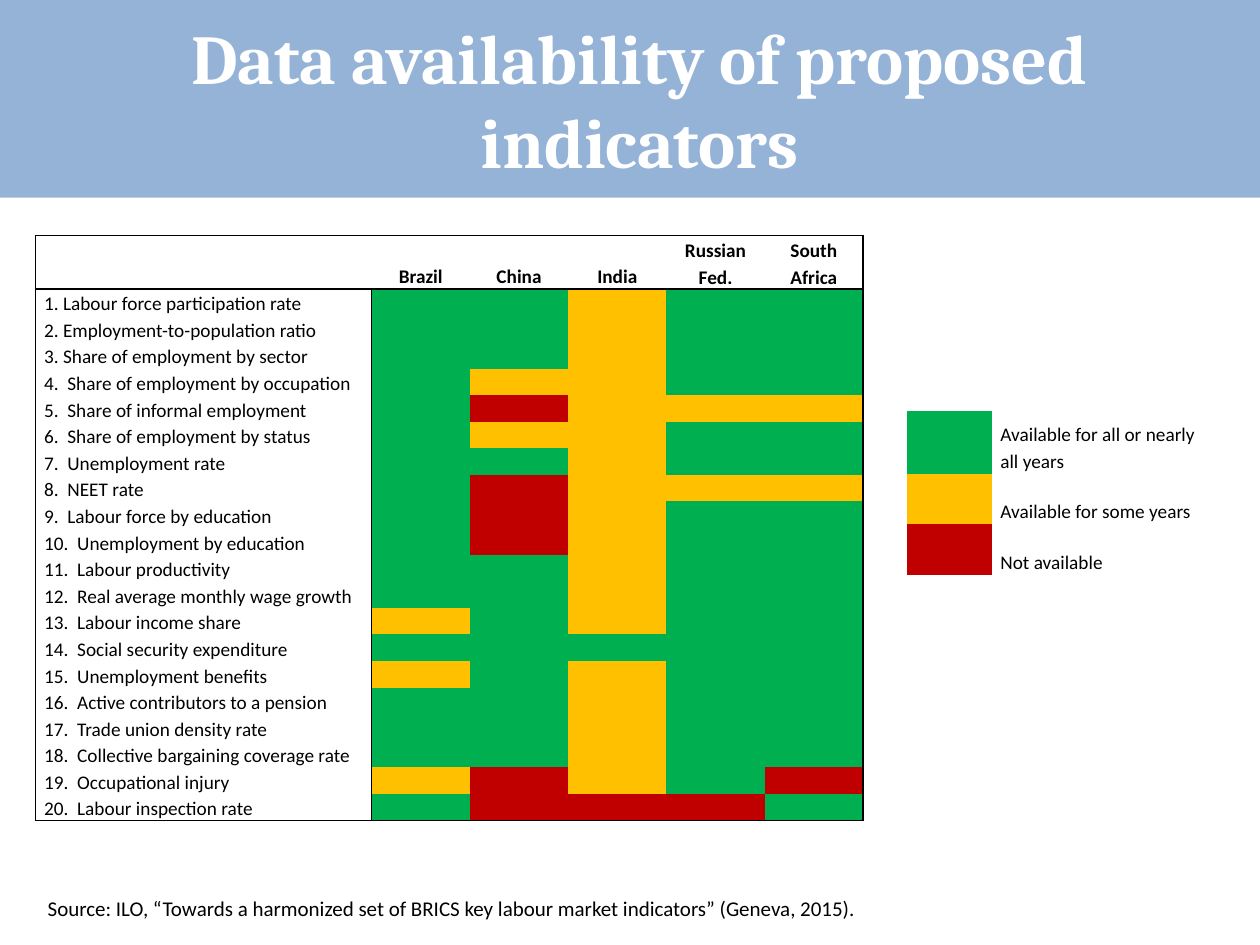
from lxml.etree import SubElement
from pptx import Presentation
from pptx.dml.color import RGBColor
from pptx.enum.shapes import MSO_SHAPE
from pptx.enum.text import MSO_ANCHOR, MSO_AUTO_SIZE, PP_ALIGN
from pptx.oxml.ns import qn
from pptx.util import Inches, Pt

COLOURS = {"G": "00B050", "Y": "FFC000", "R": "C00000"}
COUNTRIES = ["Brazil", "China", "India", "Russian Fed.", "South Africa"]
INDICATORS = [
    ("Labour force participation rate", "GGYGG"),
    ("Employment-to-population ratio", "GGYGG"),
    ("Share of employment by sector", "GGYGG"),
    ("Share of employment by occupation", "GYYGG"),
    ("Share of informal employment", "GRYYY"),
    ("Share of employment by status", "GYYGG"),
    ("Unemployment rate", "GGYGG"),
    ("NEET rate", "GRYYY"),
    ("Labour force by education", "GRYGG"),
    ("Unemployment by education", "GRYGG"),
    ("Labour productivity", "GGYGG"),
    ("Real average monthly wage growth", "GGYGG"),
    ("Labour income share", "YGYGG"),
    ("Social security expenditure", "GGGGG"),
    ("Unemployment benefits", "YGYGG"),
    ("Active contributors to a pension", "GGYGG"),
    ("Trade union density rate", "GGYGG"),
    ("Collective bargaining coverage rate", "GGYGG"),
    ("Occupational injury", "YRYGR"),
    ("Labour inspection rate", "GRRRG"),
]
LEGEND = [
    ("G", "Available for all or nearly all years"),
    ("Y", "Available for some years"),
    ("R", "Not available"),
]
NO_STYLE_NO_GRID = "{2D5ABB26-0587-4C30-8999-92F81FD0307C}"


def colour(value):
    return RGBColor.from_string(value)


class SlideBuilder:
    body_font = "Calibri"
    title_font = "Cambria"
    ink = "000000"

    def __init__(self, slide):
        self.slide = slide

    def style(self, paragraph, size, name=None, value=None, bold=False):
        font = paragraph.font
        font.size = Pt(size)
        font.name = name or self.body_font
        font.bold = bold
        font.color.rgb = colour(value or self.ink)

    def title(self, text, left, top, width, height):
        shape = self.slide.shapes.title
        shape.left, shape.top = Inches(left), Inches(top)
        shape.width, shape.height = Inches(width), Inches(height)
        frame = shape.text_frame
        frame.text = text
        frame.word_wrap = True
        frame.auto_size = MSO_AUTO_SIZE.NONE
        frame.vertical_anchor = MSO_ANCHOR.MIDDLE
        paragraph = frame.paragraphs[0]
        paragraph.alignment = PP_ALIGN.CENTER
        self.style(paragraph, 40, self.title_font, "FFFFFF", True)

    def title_band(self, width, height, value):
        shape = self.slide.shapes.add_shape(
            MSO_SHAPE.RECTANGLE, 0, 0, Inches(width), Inches(height))
        shape.shadow.inherit = False
        shape.fill.solid()
        shape.fill.fore_color.rgb = colour(value)
        shape.line.fill.background()
        self.slide.shapes.title._element.addprevious(shape._element)

    def text(self, text, left, top, width, height):
        shape = self.slide.shapes.add_textbox(
            Inches(left), Inches(top), Inches(width), Inches(height))
        frame = shape.text_frame
        frame.word_wrap = True
        frame.text = text
        self.style(frame.paragraphs[0], 12)

    def table(self, left, top, widths, heights):
        shape = self.slide.shapes.add_table(
            len(heights), len(widths), Inches(left), Inches(top),
            Inches(sum(widths)), Inches(sum(heights)))
        table = shape.table
        table.first_row = table.horz_banding = False
        table._tbl.tblPr.find(qn("a:tableStyleId")).text = NO_STYLE_NO_GRID
        for column, width in zip(table.columns, widths):
            column.width = Inches(width)
        for row, height in zip(table.rows, heights):
            row.height = Inches(height)
        return table

    def borders(self, cell, sides):
        properties = cell._tc.get_or_add_tcPr()
        for side in "LRTB":
            line = SubElement(properties, qn(f"a:ln{side}"), w=str(Pt(1)))
            if side in sides:
                solid = SubElement(line, qn("a:solidFill"))
                SubElement(solid, qn("a:srgbClr"), val=self.ink)
            else:
                SubElement(line, qn("a:noFill"))

    def cell(self, cell, text="", fill=None, sides="", anchor=MSO_ANCHOR.BOTTOM,
             alignment=PP_ALIGN.LEFT, bold=False):
        cell.margin_left = cell.margin_right = Inches(0.07)
        cell.margin_top = cell.margin_bottom = 0
        cell.vertical_anchor = anchor
        self.borders(cell, sides)
        if fill:
            cell.fill.solid()
            cell.fill.fore_color.rgb = colour(fill)
        else:
            cell.fill.background()
        if text:
            cell.text = text
            paragraph = cell.text_frame.paragraphs[0]
            paragraph.alignment = alignment
            paragraph.line_spacing = 1.15
            self.style(paragraph, 11, bold=bold)
        else:
            paragraph = cell.text_frame.paragraphs[0]
            SubElement(paragraph._p, qn("a:endParaRPr"), sz="800")

    def availability_table(self, left, top):
        last_row, last_column = len(INDICATORS), len(COUNTRIES)
        table = self.table(left, top, [2.67] + [0.78] * last_column,
                           [0.42] + [0.21] * last_row)
        for column, country in enumerate([""] + COUNTRIES):
            sides = {0: "LTB", last_column: "RTB"}.get(column, "TB")
            self.cell(table.cell(0, column), country, sides=sides,
                      alignment=PP_ALIGN.CENTER, bold=True)
        for row, (label, codes) in enumerate(INDICATORS, 1):
            edges = {1: "T", last_row: "B"}.get(row, "")
            gap = " " if row <= 3 else "  "
            self.cell(table.cell(row, 0), f"{row}.{gap}{label}",
                      sides="LR" + edges, anchor=MSO_ANCHOR.MIDDLE)
            for column, code in enumerate(codes, 1):
                sides = {1: "L", last_column: "R"}.get(column, "")
                self.cell(table.cell(row, column), fill=COLOURS[code],
                          sides=sides + edges)

    def legend(self, left, top):
        table = self.table(left, top, [0.67, 1.77], [0.5, 0.4, 0.4])
        for row, (code, label) in enumerate(LEGEND):
            self.cell(table.cell(row, 0), fill=COLOURS[code])
            self.cell(table.cell(row, 1), label)


def main():
    presentation = Presentation()
    presentation.slide_width, presentation.slide_height = Inches(10), Inches(7.5)
    builder = SlideBuilder(presentation.slides.add_slide(presentation.slide_layouts[5]))
    builder.title("Data availability of proposed indicators", 1.06, 0.06, 8.03, 1.45)
    builder.title_band(10, 1.57, "95B3D7")
    builder.text("Source: ILO, “Towards a harmonized set of BRICS key labour market "
                 "indicators” (Geneva, 2015).", 0.28, 7.06, 6.85, 0.3)
    builder.availability_table(0.28, 1.87)
    builder.legend(7.2, 3.26)
    presentation.save("out.pptx")


if __name__ == "__main__":
    main()
